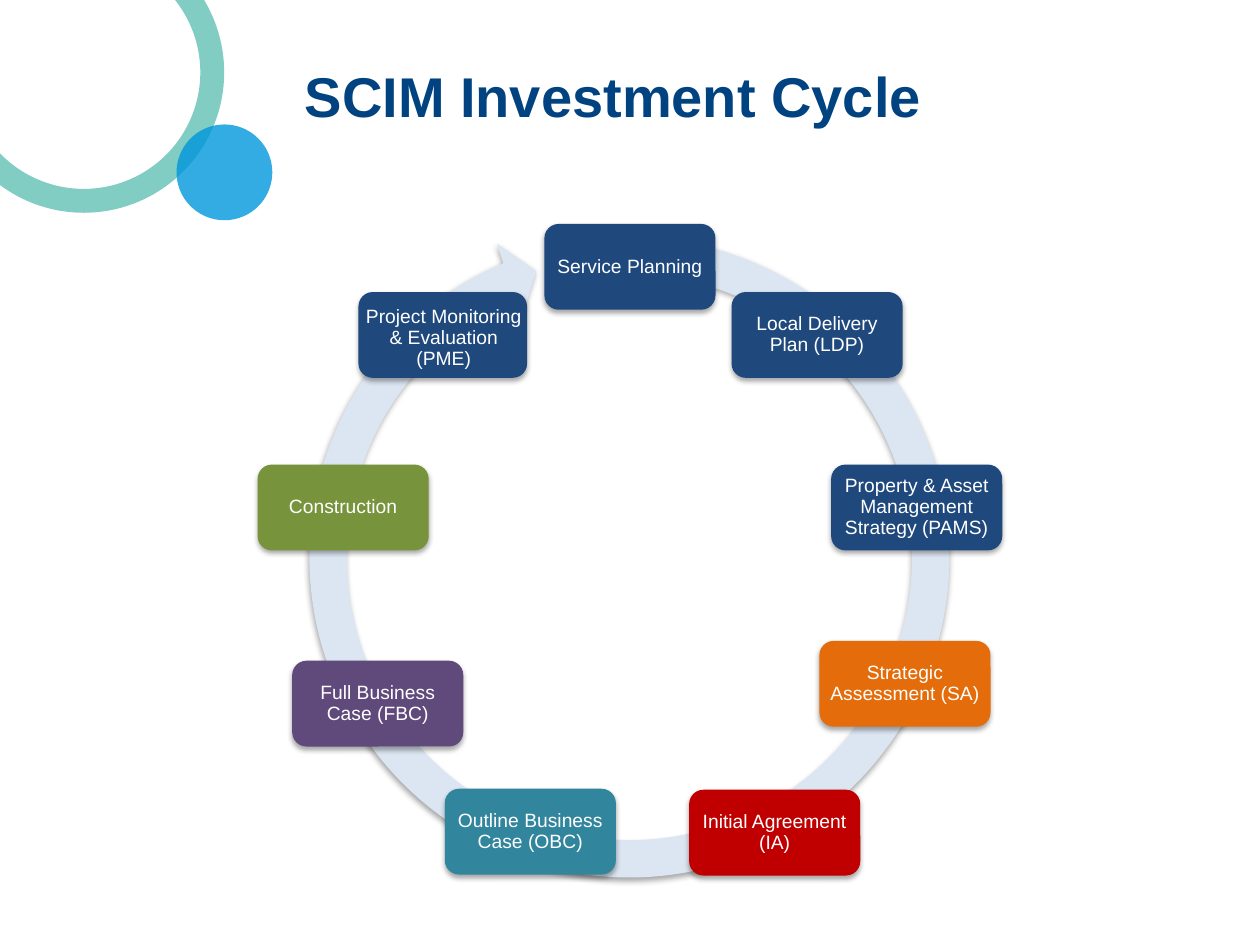
from dataclasses import dataclass
from math import cos, radians, sin

from lxml.etree import SubElement
from pptx import Presentation
from pptx.dml.color import RGBColor
from pptx.enum.shapes import MSO_SHAPE as Shape
from pptx.enum.text import MSO_ANCHOR as Anchor, MSO_AUTO_SIZE as AutoSize, PP_ALIGN as Align
from pptx.oxml.ns import qn
from pptx.util import Cm, Pt


@dataclass(frozen=True)
class Theme:
    """Colours, font and type sizes of the deck."""
    font: str = "Arial"
    title_size: int = 32
    label_size: int = 11
    title: str = "004380"
    label: str = "FFFFFF"
    ring: str = "81CDC4"
    dot: str = "0096DC"
    arrow: str = "DCE6F2"
    planning: str = "1F497D"
    strategic: str = "E46C0A"
    initial: str = "C00000"
    outline: str = "31859C"
    full: str = "604A7B"
    construction: str = "77933C"


class CyclePage:
    """Draws styled elements on one slide."""

    def __init__(self, page, theme):
        self.page = page
        self.theme = theme

    def heading(self, text, left, top, width, height):
        """Place and format the title placeholder."""
        box = self.page.shapes.title
        box.left, box.top, box.width, box.height = map(Cm, (left, top, width, height))
        frame = box.text_frame
        frame.text = text
        frame.word_wrap = True
        frame.auto_size = AutoSize.NONE
        frame.vertical_anchor = Anchor.TOP
        para = frame.paragraphs[0]
        para.alignment = Align.LEFT
        self.style(para, self.theme.title_size, self.theme.title, bold=True)

    def style(self, para, size, colour, bold=False):
        """Set the font of a whole paragraph."""
        para.font.name = self.theme.font
        para.font.size = Pt(size)
        para.font.bold = bold
        para.font.color.rgb = RGBColor.from_string(colour)

    def figure(self, kind, left, top, width, height, colour, adjustments=(), opacity=None):
        """Add a borderless filled shape."""
        box = self.page.shapes.add_shape(kind, *map(Cm, (left, top, width, height)))
        box.shadow.inherit = False
        box.line.fill.background()
        box.fill.solid()
        box.fill.fore_color.rgb = RGBColor.from_string(colour)
        for index, value in enumerate(adjustments):
            box.adjustments[index] = value
        if opacity is not None:
            self.set_alpha(box.fill._xPr.find(qn("a:solidFill"))[0], opacity)
        return box

    def set_alpha(self, colour, percent):
        """Make a colour element partly transparent."""
        SubElement(colour, qn("a:alpha"), val=str(percent * 1000))

    def drop_shadow(self, box):
        """Cast a soft shadow straight down."""
        effects = box._element.spPr.find(qn("a:effectLst"))
        shadow = SubElement(effects, qn("a:outerShdw"), blurRad=str(Pt(3.1)), dist=str(Pt(1.8)),
                            dir="5400000", rotWithShape="0")
        self.set_alpha(SubElement(shadow, qn("a:srgbClr"), val="000000"), 35)

    def cycle_arrow(self, left, top, size, colour):
        """Add the large circular arrow."""
        arrow = self.figure(Shape.CIRCULAR_ARROW, left, top, size, size, colour,
                            (0.055, 3.307, 147.888, 167.955, 0.058))
        self.drop_shadow(arrow)

    def stage(self, text, centre_x, centre_y, width, height, colour, margins):
        """Add a rounded box centred on a point."""
        box = self.figure(Shape.ROUNDED_RECTANGLE, centre_x - width / 2, centre_y - height / 2,
                          width, height, colour)
        self.drop_shadow(box)
        frame = box.text_frame
        frame.text = text
        frame.word_wrap = True
        frame.vertical_anchor = Anchor.MIDDLE
        (frame.margin_left, frame.margin_top,
         frame.margin_right, frame.margin_bottom) = map(Cm, margins)
        para = frame.paragraphs[0]
        para.alignment = Align.CENTER
        para.line_spacing = 0.9
        self.style(para, self.theme.label_size, self.theme.label)


def main():
    """Build and save the investment cycle slide."""
    theme = Theme()
    deck = Presentation()
    deck.slide_width, deck.slide_height = Cm(25.4), Cm(19.05)
    cycle = CyclePage(deck.slides.add_slide(deck.slide_layouts[5]), theme)

    cycle.figure(Shape.DONUT, -1.14, -1.37, 5.66, 5.66, theme.ring, (0.085,))
    cycle.figure(Shape.OVAL, 3.56, 2.51, 1.93, 1.93, theme.dot, opacity=80)
    cycle.heading("SCIM Investment Cycle", 5.89, 1.12, 13.59, 1.63)
    cycle.cycle_arrow(5.82, 4.37, 13.74, theme.arrow)

    centre_x, centre_y, radius = 12.7, 11.25, 5.87
    even, tight = (3.45, (0.04, 0.13, 0.04, 0.13)), (3.4, (0.04, 0.13, 0, 0))
    stages = [
        ("Service Planning", theme.planning, 0, 0, even),
        ("Local Delivery Plan (LDP)", theme.planning, 0, 0, even),
        ("Property & Asset Management Strategy (PAMS)", theme.planning, 0, 0, even),
        ("Strategic Assessment (SA)", theme.strategic, 0.46, -0.4, even),
        ("Initial Agreement (IA)", theme.initial, 0.91, 0.02, even),
        ("Outline Business Case (OBC)", theme.outline, 0, 0, even),
        ("Full Business Case (FBC)", theme.full, 0, 0, even),
        ("Construction", theme.construction, 0, 0, even),
        ("Project Monitoring & Evaluation (PME)", theme.planning, 0, 0, tight),
    ]
    for index, (text, colour, shift_x, shift_y, (width, margins)) in enumerate(stages):
        angle = radians(index * 360 / len(stages))
        cycle.stage(text, centre_x + radius * sin(angle) + shift_x,
                    centre_y - radius * cos(angle) + shift_y, width, 1.73, colour, margins)

    deck.save("out.pptx")


if __name__ == "__main__":
    main()
